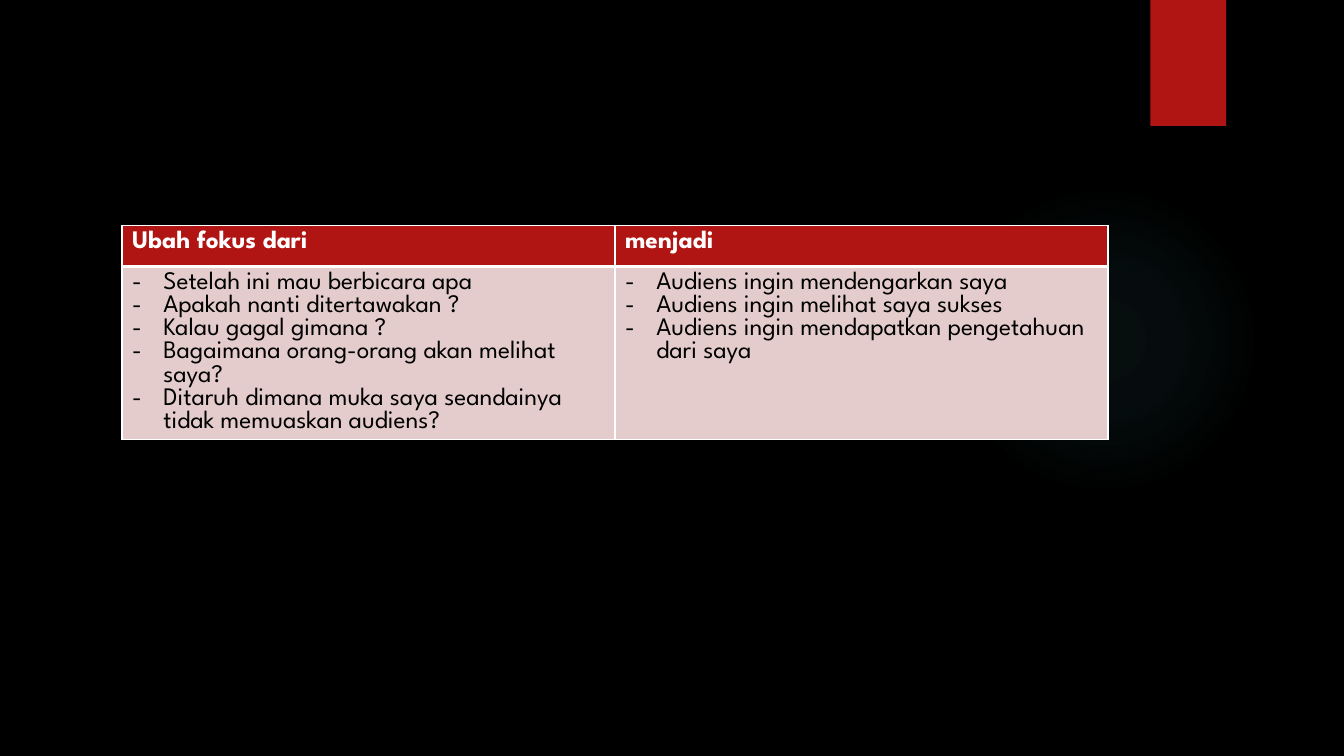
from lxml.etree import SubElement
from pptx import Presentation
from pptx.dml.color import RGBColor
from pptx.enum.shapes import MSO_SHAPE
from pptx.oxml import parse_xml
from pptx.oxml.ns import nsdecls, qn
from pptx.util import Inches, Pt

BLACK = RGBColor(0x00, 0x00, 0x00)
WHITE = RGBColor(0xFF, 0xFF, 0xFF)
RED = RGBColor(0xB0, 0x15, 0x13)
PINK = RGBColor(0xE4, 0xCC, 0xCC)
TEAL = RGBColor(0x50, 0xB9, 0xC1)

FOCUS_SHIFT = {
    "Ubah fokus dari": [
        "Setelah ini mau berbicara apa",
        "Apakah nanti ditertawakan ?",
        "Kalau gagal gimana ?",
        "Bagaimana orang-orang akan melihat saya?",
        "Ditaruh dimana muka saya seandainya tidak memuaskan audiens?",
    ],
    "menjadi": [
        "Audiens ingin mendengarkan saya",
        "Audiens ingin melihat saya sukses",
        "Audiens ingin mendapatkan pengetahuan dari saya",
    ],
}


class SlideBuilder:
    """Holds the style and the current slide; lengths are percentages of the slide."""

    font_name = "League Spartan"
    font_size = Pt(18)
    indent = Inches(0.31)

    def __init__(self, deck):
        self.deck = deck
        self.slide = deck.slides.add_slide(deck.slide_layouts[6])
        background = self.slide.background.fill
        background.solid()
        background.fore_color.rgb = BLACK

    def across(self, share):
        return round(self.deck.slide_width * share / 100)

    def down(self, share):
        return round(self.deck.slide_height * share / 100)

    def box(self, left, top, width, height):
        return self.across(left), self.down(top), self.across(width), self.down(height)

    def block(self, preset, place, color):
        block = self.slide.shapes.add_shape(preset, *self.box(*place))
        block.shadow.inherit = False
        block.line.fill.background()
        block.fill.solid()
        block.fill.fore_color.rgb = color
        return block

    def glow(self, place, color, stops):
        glow = self.block(MSO_SHAPE.OVAL, place, color)
        stop_xml = "".join(
            f'<a:gs pos="{position * 1000}"><a:srgbClr val="{color}">'
            f'<a:alpha val="{opacity * 1000}"/></a:srgbClr></a:gs>'
            for position, opacity in stops)
        gradient = parse_xml(
            f'<a:gradFill {nsdecls("a")}><a:gsLst>{stop_xml}</a:gsLst><a:path path="circle">'
            '<a:fillToRect l="50000" t="50000" r="50000" b="50000"/></a:path></a:gradFill>')
        properties = glow.fill._xPr
        properties.replace(properties.find(qn("a:solidFill")), gradient)

    def cell(self, cell, lines, fill, color, thick_side, header=False):
        properties = cell._tc.get_or_add_tcPr()
        for side in ("lnL", "lnR", "lnT", "lnB"):
            width = Pt(3 if side == thick_side else 1)
            properties.append(parse_xml(
                f'<a:{side} {nsdecls("a")} w="{width}"><a:solidFill>'
                f'<a:srgbClr val="{WHITE}"/></a:solidFill></a:{side}>'))
        cell.fill.solid()
        cell.fill.fore_color.rgb = fill
        cell.text = "\n".join(lines)
        for paragraph in cell.text_frame.paragraphs:
            if not header:
                self.dash(paragraph)
            font = paragraph.font
            font.name, font.size, font.bold = self.font_name, self.font_size, header
            font.color.rgb = color

    def dash(self, paragraph):
        properties = paragraph._p.get_or_add_pPr()
        properties.set("marL", str(self.indent))
        properties.set("indent", str(-self.indent))
        SubElement(properties, qn("a:buFont")).set("typeface", self.font_name)
        SubElement(properties, qn("a:buChar")).set("char", "-")

    def table(self, place, header_height, columns):
        frame = self.slide.shapes.add_table(2, len(columns), *self.box(*place))
        table = frame.table
        table.horz_banding = False
        header_row, body_row = table.rows
        header_row.height = self.down(header_height)
        body_row.height = self.down(place[3] - header_height)
        for index, (heading, points) in enumerate(columns.items()):
            self.cell(table.cell(0, index), [heading], RED, WHITE, "lnB", header=True)
            self.cell(table.cell(1, index), points, PINK, BLACK, "lnT")


def main():
    deck = Presentation()
    deck.slide_width, deck.slide_height = Inches(13.33), Inches(7.5)
    builder = SlideBuilder(deck)
    builder.glow((70.59, 24.4, 23.11, 41.07), TEAL, [(0, 7), (36, 6), (69, 0)])
    builder.block(MSO_SHAPE.RECTANGLE, (85.6, 0, 5.63, 16.67), RED)
    builder.table((9.08, 29.87, 73.37, 28.27), 5.4, FOCUS_SHIFT)
    deck.save("out.pptx")


if __name__ == "__main__":
    main()
